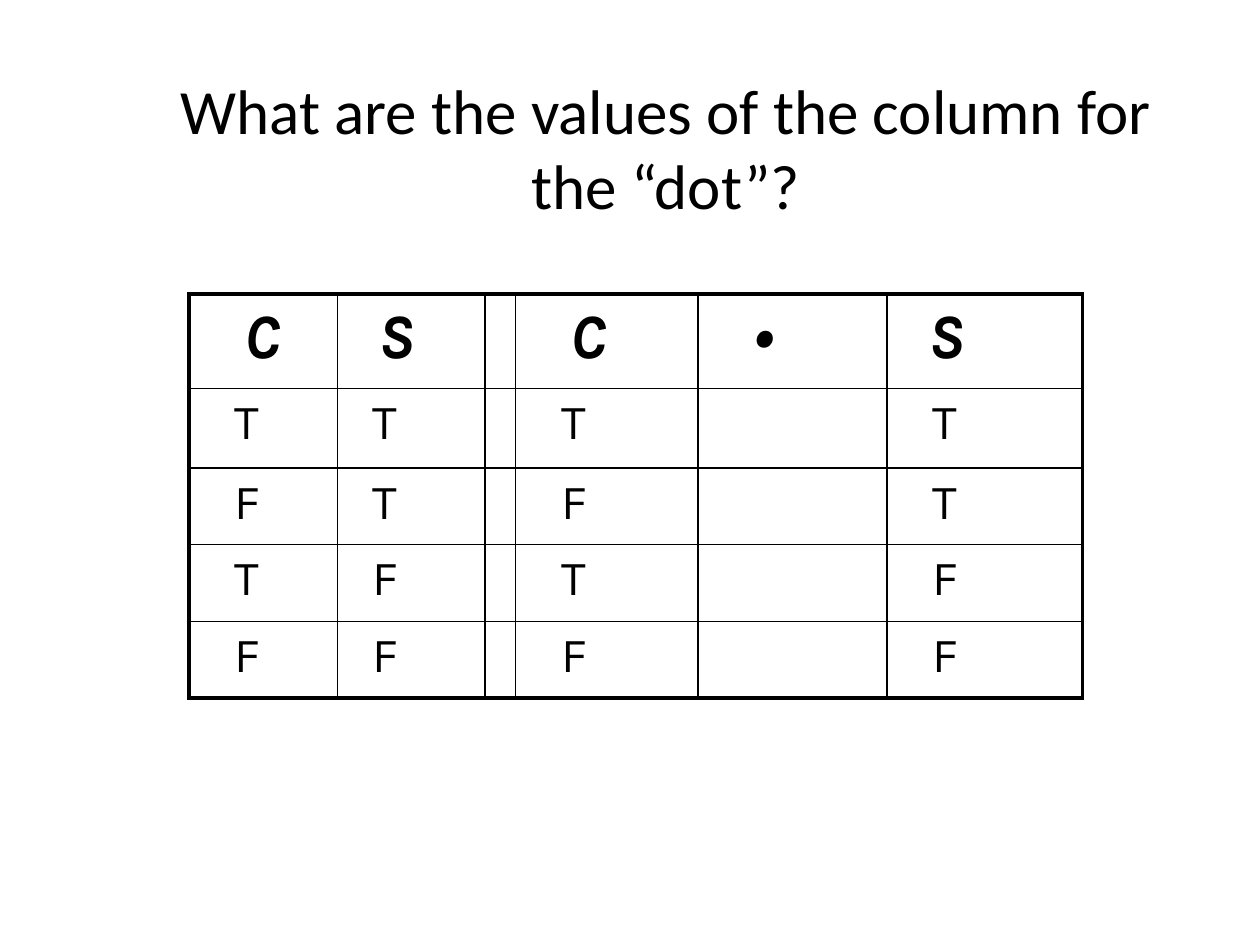
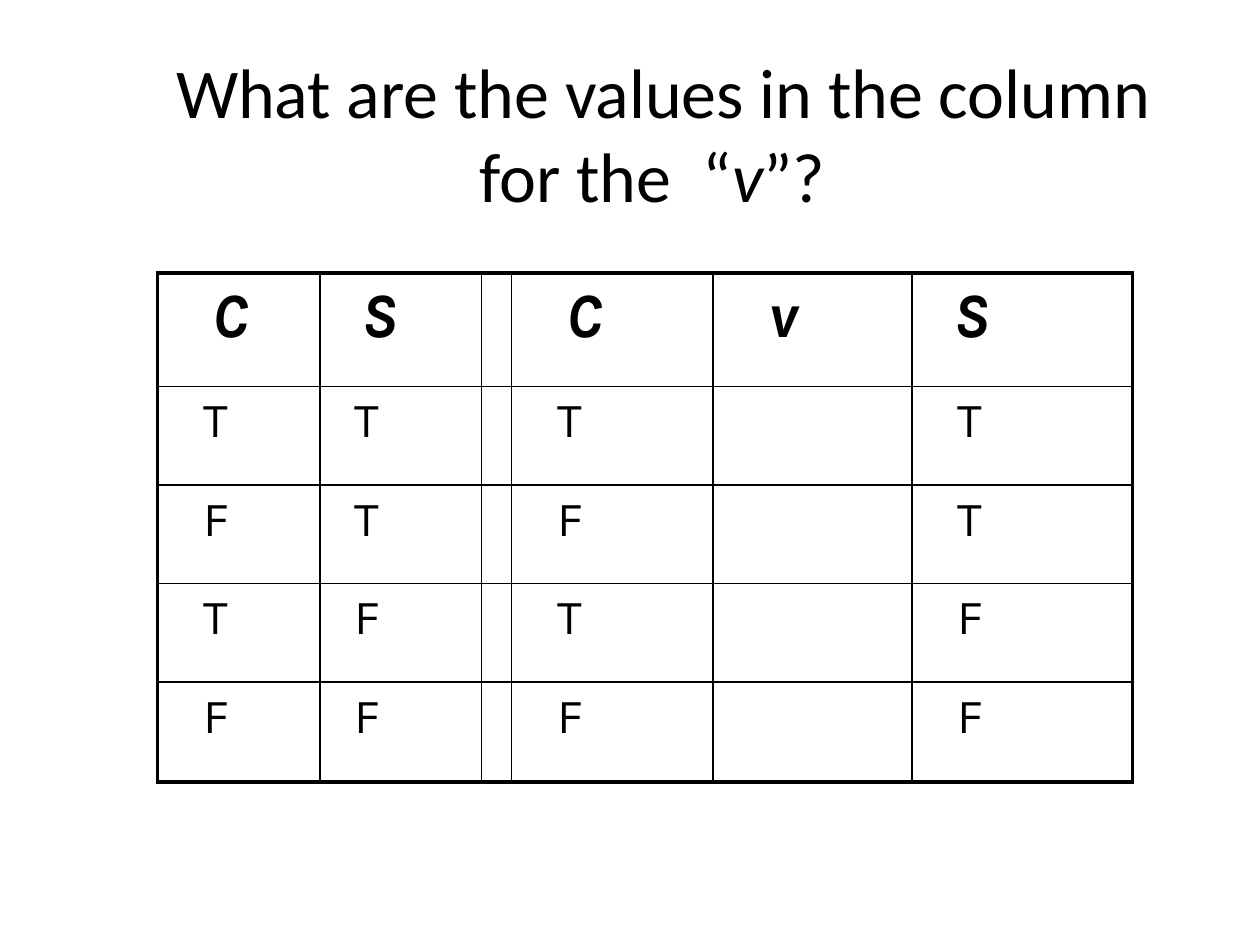
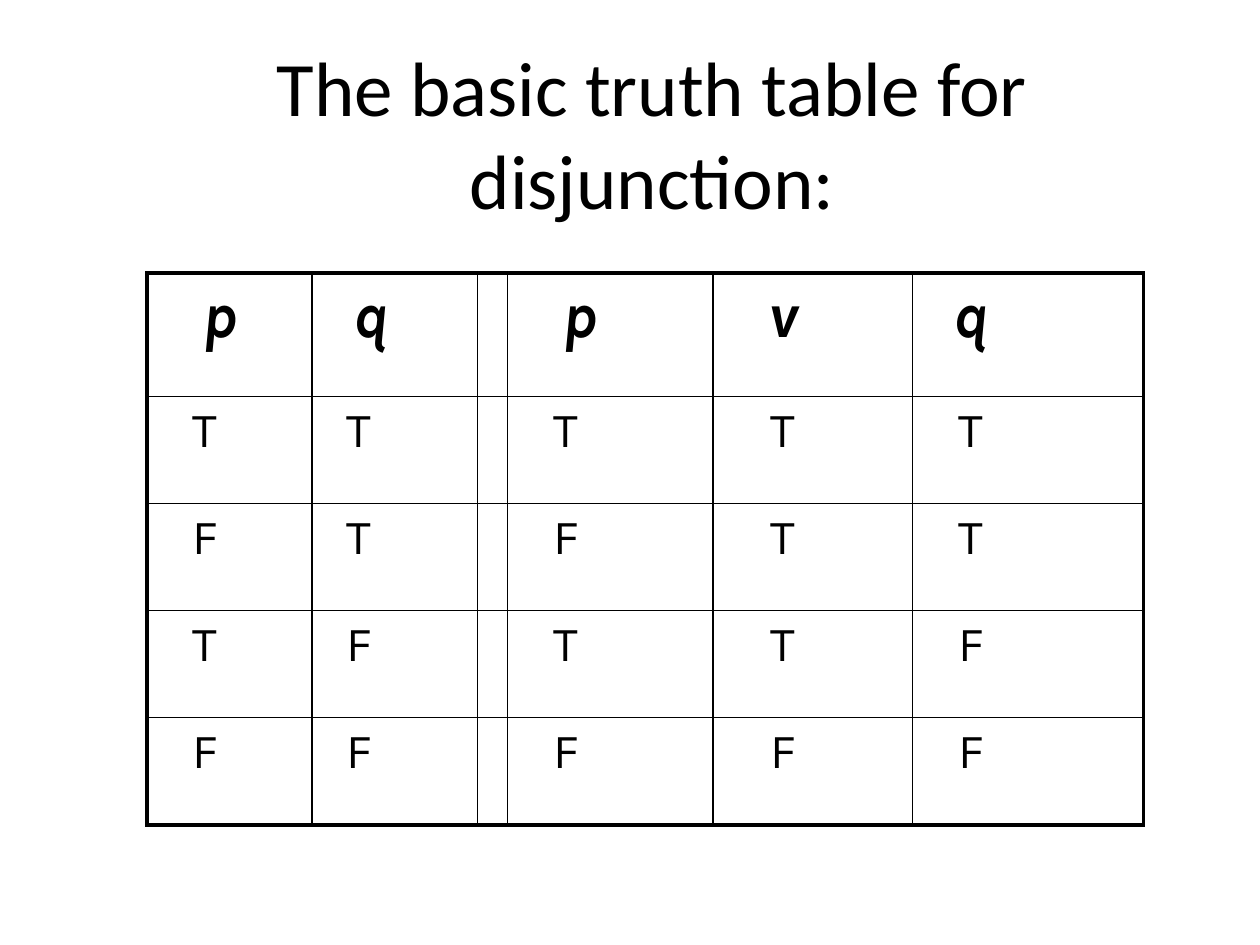
from dataclasses import dataclass

from lxml.etree import SubElement as Sub
from pptx import Presentation
from pptx.dml.color import RGBColor as Rgb
from pptx.enum.text import MSO_ANCHOR as Anchor, PP_ALIGN as Align
from pptx.oxml.ns import qn
from pptx.util import Emu, Inches, Pt


@dataclass(frozen=True)
class Theme:
    """Colours, fonts, type sizes and line widths of the deck."""
    ink: str = "000000"
    title: str = "Calibri"
    body: str = "Karla"
    head: int = 36
    cell: int = 28
    thin: float = 1
    thick: float = 2.25
    space: float = 0.226


THEME = Theme()
UNIT = Inches(1) / 12
COLS, ROWS = 120, 90
PAD = Inches(0.1)
HEAD_IN = (3, 2, 0, 3, 3, 2)
BODY_IN = (3, 2, 0, 3, 4, 3)
LEFT, RIGHT = "TFTF", "TTFF"


def grid(*box):
    """Turn grid steps into slide lengths."""
    return [Emu(round(step * UNIT)) for step in box]


def style(run, face, size, bold=False, slant=False):
    """Format one run of text."""
    font = run.font
    font.name, font.size = face, Pt(size)
    font.bold, font.italic = bold, slant
    font.color.rgb = Rgb.from_string(THEME.ink)


def title(slide, box, parts, size, shift=0):
    """Add a centred heading; parts alternate upright and italic."""
    frame = slide.shapes.add_textbox(*grid(*box)).text_frame
    frame.word_wrap = True
    frame.vertical_anchor = Anchor.MIDDLE
    para = frame.paragraphs[0]
    para.alignment = Align.CENTER
    para._p.get_or_add_pPr().set("indent", str(Pt(shift)))
    for i, part in enumerate(parts):
        run = para.add_run()
        run.text = part
        style(run, THEME.title, size, slant=i % 2 == 1)


def edge(cell, side, width):
    """Draw one border of a cell."""
    props = cell._tc.get_or_add_tcPr()
    line = Sub(props, qn(f"a:ln{side}"), w=str(Pt(width)))
    Sub(Sub(line, qn("a:solidFill")), qn("a:srgbClr"), val=THEME.ink)


def fill(cell, text, top, steps):
    """Write a cell's text, indented by a number of space widths."""
    size = THEME.head if top else THEME.cell
    cell.margin_left = PAD + Pt(steps * THEME.space * size)
    cell.fill.background()
    if text:
        cell.text_frame.text = text
        run = cell.text_frame.paragraphs[0].runs[0]
        style(run, THEME.body, size, top, top)


def truth(slide, box, cols, rows, names, result):
    """Add a truth table whose columns and rows share the box by weight."""
    left, sign, right = names
    heads = (left, right, "", left, sign, right)
    body = zip(LEFT, RIGHT, [""] * 4, LEFT, result, RIGHT)
    data = [heads, *body]
    x, y, wide, high = grid(*box)
    table = slide.shapes.add_table(len(rows), len(cols), x, y, wide, high).table
    table.first_row = table.horz_banding = False
    for col, part in zip(table.columns, cols):
        col.width = round(wide * part / sum(cols))
    for row, part in zip(table.rows, rows):
        row.height = round(high * part / sum(rows))
    for r, line in enumerate(data):
        for c, text in enumerate(line):
            cell = table.cell(r, c)
            outer = {"L": c == 0, "R": c == len(cols) - 1,
                     "T": r == 0, "B": r == len(rows) - 1}
            for side, thick in outer.items():
                edge(cell, side, THEME.thick if thick else THEME.thin)
            fill(cell, text, r == 0, (BODY_IN if r else HEAD_IN)[c])


def main():
    """Build the three slides and save them."""
    deck = Presentation()
    deck.slide_width, deck.slide_height = grid(COLS, ROWS)
    dot, wedge, basic = [deck.slides.add_slide(deck.slide_layouts[6]) for _ in range(3)]
    blank = [""] * 4
    top = (11, 3, 102.24, 19.2)

    title(dot, (15, 5, 96.84, 18),
          ["What are the values of the column for the “dot”?"], 36)
    truth(dot, (18, 28, 85, 38.5), (1.18, 1.17, 0.23, 1.45, 1.5, 1.55),
          (0.75, 0.63, 0.61, 0.61, 0.61), "C•S", blank)

    title(wedge, top,
          ["What are the values in the column for the  “", "v", "”?"], 40, 12.7)
    truth(wedge, (15, 26, 92.76, 48.5), (1.29, 1.28, 0.23, 1.6, 1.58, 1.75),
          (0.9, 0.78, 0.78, 0.78, 0.79), "CvS", blank)

    title(basic, top, ["The basic truth table for disjunction:"], 44)
    truth(basic, (14, 26, 94.8, 52.56), (1.31, 1.31, 0.23, 1.63, 1.58, 1.83),
          (0.98, 0.85, 0.85, 0.85, 0.85), "pvq", "TTTF")

    deck.save("out.pptx")


if __name__ == "__main__":
    main()
